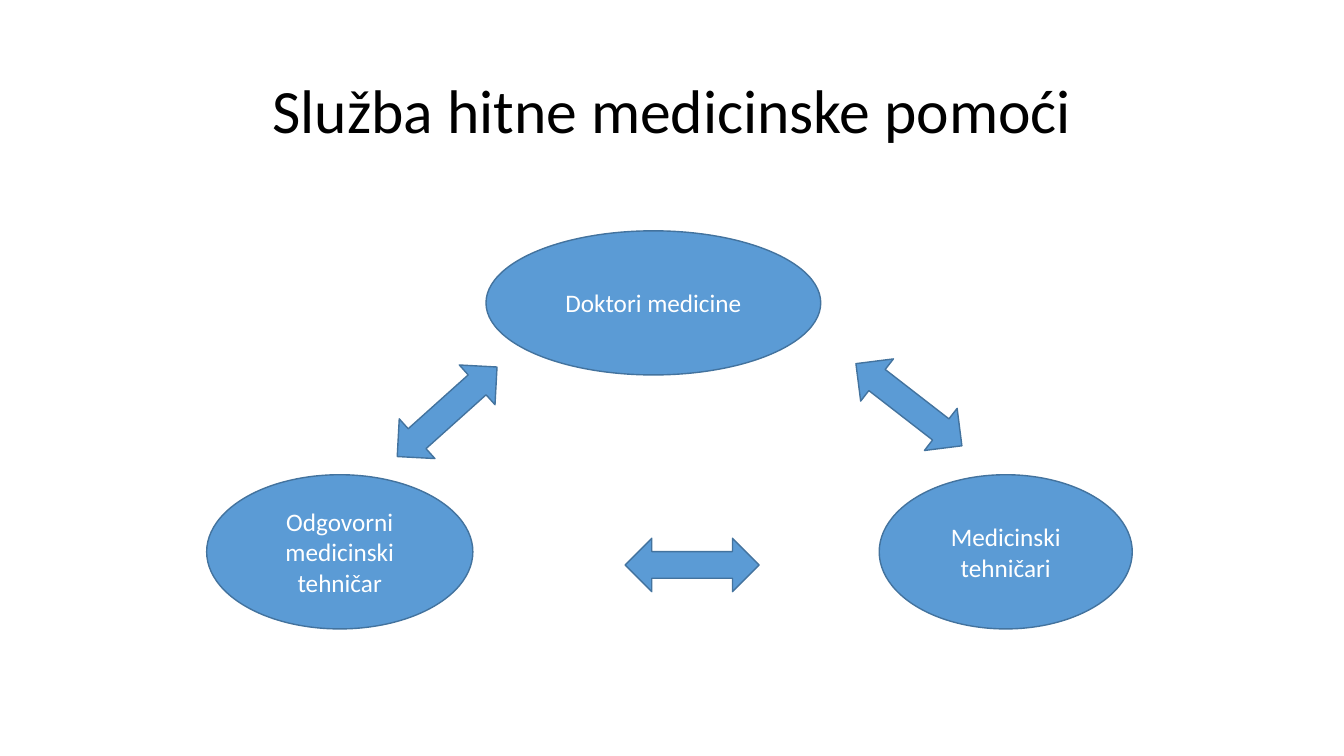
"""Build a slide of the three linked roles in an emergency medical service."""
from dataclasses import dataclass

from pptx import Presentation
from pptx import util as u
from pptx.dml.color import RGBColor
from pptx.enum import shapes, text
from pptx.shapes.autoshape import Shape
from pptx.slide import Slide
from pptx.text.text import TextFrame

BLUE = RGBColor(0x5B, 0x9B, 0xD5)
EDGE = RGBColor(0x43, 0x73, 0x9E)
WHITE = RGBColor(0xFF, 0xFF, 0xFF)
BLACK = RGBColor(0x00, 0x00, 0x00)
KIND = shapes.MSO_SHAPE


@dataclass(frozen=True)
class Box:
    """Position and size in inches."""
    left: float
    top: float
    width: float
    height: float

    def place(self) -> tuple[u.Length, ...]:
        """Return the four lengths that python-pptx expects."""
        return tuple(u.Inches(n) for n in (self.left, self.top, self.width, self.height))


@dataclass(frozen=True)
class Role:
    """A labelled ellipse."""
    label: str
    box: Box


@dataclass(frozen=True)
class Arrow:
    """A double arrow between two roles."""
    kind: KIND
    box: Box
    turn: float = 0


TITLE = Role("Služba hitne medicinske pomoći", Box(0.92, 0.4, 11.5, 1.45))
ROLES = (
    Role("Doktori medicine", Box(4.82, 2.29, 3.32, 1.43)),
    Role("Odgovorni medicinski tehničar", Box(2.05, 4.71, 2.64, 1.53)),
    Role("Medicinski tehničari", Box(8.72, 4.71, 2.51, 1.53)),
)
ARROWS = (
    Arrow(KIND.LEFT_RIGHT_ARROW, Box(6.2, 5.34, 1.33, 0.53)),
    Arrow(KIND.LEFT_RIGHT_ARROW, Box(3.77, 3.82, 1.33, 0.53), 318.1),
    Arrow(KIND.UP_DOWN_ARROW, Box(8.75, 3.35, 0.53, 1.33), 307.8),
)


def write(frame: TextFrame, label: str, size: int, color: RGBColor) -> None:
    """Put one centred paragraph into a text frame."""
    frame.word_wrap = True
    frame.vertical_anchor = text.MSO_ANCHOR.MIDDLE
    para = frame.paragraphs[0]
    para.text = label
    para.alignment = text.PP_ALIGN.CENTER
    para.font.name = "Calibri"
    para.font.size = u.Pt(size)
    para.font.color.rgb = color


def draw(slide: Slide, kind: KIND, box: Box) -> Shape:
    """Add a blue outlined shape without a shadow."""
    shape = slide.shapes.add_shape(kind, *box.place())
    shape.shadow.inherit = False
    shape.fill.solid()
    shape.fill.fore_color.rgb = BLUE
    shape.line.color.rgb = EDGE
    shape.line.width = u.Pt(1)
    return shape


def main() -> None:
    """Build and save the slide."""
    deck = Presentation()
    deck.slide_width, deck.slide_height = u.Inches(13.33), u.Inches(7.5)
    slide = deck.slides.add_slide(deck.slide_layouts[6])

    title = slide.shapes.add_textbox(*TITLE.box.place()).text_frame
    write(title, TITLE.label, 44, BLACK)
    title.paragraphs[0].line_spacing = 0.9

    for role in ROLES:
        write(draw(slide, KIND.OVAL, role.box).text_frame, role.label, 18, WHITE)
    for arrow in ARROWS:
        draw(slide, arrow.kind, arrow.box).rotation = arrow.turn

    deck.save("out.pptx")


if __name__ == "__main__":
    main()
